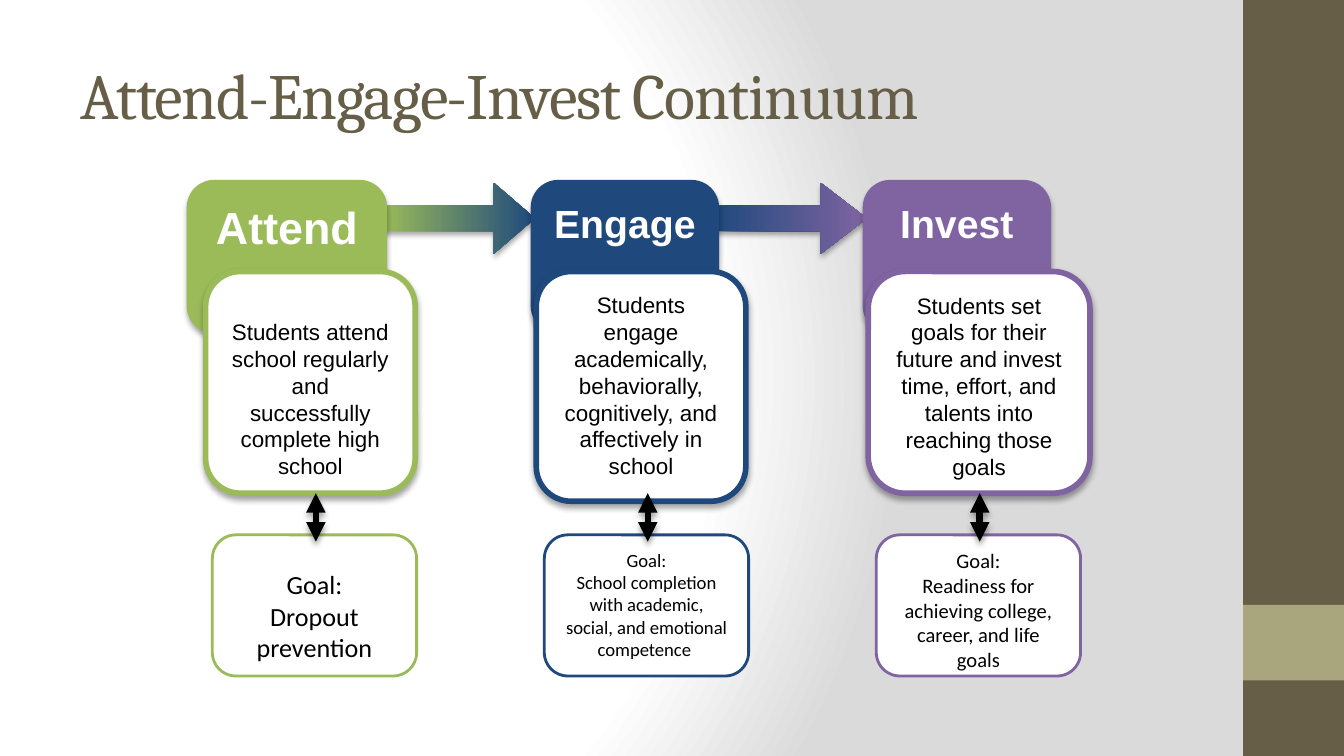
from lxml import etree
from pptx import Presentation
from pptx.dml.color import RGBColor
from pptx.enum.shapes import MSO_CONNECTOR, MSO_SHAPE
from pptx.enum.text import MSO_ANCHOR, PP_ALIGN
from pptx.oxml import parse_xml
from pptx.oxml.ns import nsdecls, qn
from pptx.util import Inches, Pt

ROUNDED, RECTANGLE, ARROW = (
    MSO_SHAPE.ROUNDED_RECTANGLE, MSO_SHAPE.RECTANGLE, MSO_SHAPE.RIGHT_ARROW)
STRAIGHT = MSO_CONNECTOR.STRAIGHT
TOP, MIDDLE = MSO_ANCHOR.TOP, MSO_ANCHOR.MIDDLE
LEFT, CENTER = PP_ALIGN.LEFT, PP_ALIGN.CENTER

# Content: spans are (left offset in the column, width), in inches
TITLE = "Attend-Engage-Invest Continuum"
STAGES = [
    {"name": "Attend", "color": "green", "name_size": 24,
     "header": (-0.17, 1.45), "detail": (-0.05, 1.56), "detail_height": 1.65,
     "text": "Students attend school regularly and successfully complete high school",
     "text_drop": 0.2, "goal": "Dropout prevention", "goal_size": 14, "goal_drop": 0.15},
    {"name": "Engage", "color": "blue", "name_size": 21,
     "header": (-0.08, 1.36), "detail": (-0.06, 1.56), "detail_height": 1.71,
     "text": "Students engage academically, behaviorally, cognitively, and affectively in school",
     "text_drop": 0, "goal": "School completion with academic, social, and emotional competence ",
     "goal_size": 10, "goal_drop": 0},
    {"name": "Invest", "color": "purple", "name_size": 21,
     "header": (-0.08, 1.36), "detail": (-0.06, 1.65), "detail_height": 1.65,
     "text": "Students set goals for their future and invest time, effort, and talents "
             "into reaching those goals",
     "text_drop": 0, "goal": "Readiness for achieving college, career, and life goals",
     "goal_size": 11, "goal_drop": 0},
]
COLORS = {"green": "9BBB59", "blue": "1F497D", "purple": "8064A2", "white": "FFFFFF",
          "black": "000000", "brown": "675E47", "khaki": "A9A57C", "gray": "DADADA"}

# Grid, on a 16:9 slide
WIDTH = 10
HEIGHT = WIDTH * 9 / 16
COLUMN_START, COLUMN_PITCH = 1.58, 2.47
HEADER_TOP, HEADER_HEIGHT = 1.36, 1.1
DETAIL_TOP = 2.02
GOAL_TOP, GOAL_WIDTH, GOAL_HEIGHT = 3.98, 1.52, 1.05
LINK_OFFSET, LINK_TOP, LINK_BOTTOM = 0.77, 3.67, 4.03
ARROWS = [(2.84, 0.58), (5.31, 0.65)]
ARROW_WIDTH, ARROW_HEIGHT, ARROW_SHAFT = 1.14, 0.53, 0.36


def rgb(name):
    return RGBColor.from_string(COLORS[name])


def add_shadow(element):
    properties = element.spPr
    effects = properties.find(qn("a:effectLst"))
    if effects is None:
        effects = etree.SubElement(properties, qn("a:effectLst"))
    effects.append(parse_xml(
        f'<a:outerShdw {nsdecls("a")} blurRad="{Pt(3)}" dist="{Pt(2.1)}" dir="5400000" '
        f'rotWithShape="0"><a:srgbClr val="{COLORS["black"]}"><a:alpha val="35000"/>'
        '</a:srgbClr></a:outerShdw>'))


def add_block(kind, box, fill, line=None, line_width=1, shadow=False):
    shape = slide.shapes.add_shape(kind, *map(Inches, box))
    shape.shadow.inherit = False
    if isinstance(fill, tuple):
        shape.fill.gradient()
        shape.fill.gradient_angle = 0
        for stop, color in zip(shape.fill.gradient_stops, fill):
            stop.color.rgb = rgb(color)
    else:
        shape.fill.solid()
        shape.fill.fore_color.rgb = rgb(fill)
    if line:
        shape.line.color.rgb = rgb(line)
        shape.line.width = Pt(line_width)
    else:
        shape.line.fill.background()
    if shadow:
        add_shadow(shape._element)
    return shape


def write(shape, lines, font, size, color, bold=False, inset=0.05, drop=0,
          anchor=TOP, align=CENTER):
    frame = shape.text_frame
    frame_format = {"word_wrap": True, "vertical_anchor": anchor,
                    "margin_top": Inches(inset + drop), "margin_bottom": Inches(inset)}
    for name, value in frame_format.items():
        setattr(frame, name, value)
    frame.text = "\n".join(lines)
    for paragraph in frame.paragraphs:
        paragraph.alignment = align
        run = paragraph.runs[0]
        for name, value in {"name": font, "size": Pt(size), "bold": bold}.items():
            setattr(run.font, name, value)
        run.font.color.rgb = rgb(color)


presentation = Presentation()
presentation.slide_width, presentation.slide_height = Inches(WIDTH), Inches(HEIGHT)
slide = presentation.slides.add_slide(presentation.slide_layouts[6])

# Background glow
slide.background.fill.solid()
solid = next(slide._element.iter(qn("a:solidFill")))
stops = "".join(f'<a:gs pos="{position * 1000}"><a:srgbClr val="{COLORS[color]}"/></a:gs>'
                for position, color in [(0, "white"), (75, "white"), (100, "gray")])
solid.getparent().replace(solid, parse_xml(
    f'<a:gradFill {nsdecls("a")} rotWithShape="1"><a:gsLst>{stops}</a:gsLst>'
    '<a:path path="circle"><a:fillToRect l="20000" t="50000" r="100000" b="50000"/>'
    '</a:path></a:gradFill>'))

# Side band
band_left, band_width = 0.925 * WIDTH, 0.075 * WIDTH
add_block(RECTANGLE, (band_left, 0, band_width, HEIGHT), "brown")
add_block(RECTANGLE, (band_left, 0.8 * HEIGHT, band_width, 0.1 * HEIGHT), "khaki")

# Title
title = slide.shapes.add_textbox(*map(Inches, (0.5, 0.23, 8.33, 0.94)))
write(title, [TITLE], "Cambria", 34.5, "brown", anchor=MIDDLE, align=LEFT)
title.text_frame.paragraphs[0].runs[0]._r.get_or_add_rPr().set("spc", "-75")

# Arrows between stages
for (left, head), start, end in zip(ARROWS, STAGES, STAGES[1:]):
    arrow = add_block(ARROW, (left, HEADER_TOP, ARROW_WIDTH, ARROW_HEIGHT),
                      (start["color"], end["color"]), shadow=True)
    arrow.adjustments[0], arrow.adjustments[1] = ARROW_SHAFT, head

# Stage columns: header, detail card, goal, two-way link
for index, stage in enumerate(STAGES):
    column = COLUMN_START + index * COLUMN_PITCH
    color = stage["color"]

    offset, width = stage["header"]
    header = add_block(ROUNDED, (column + offset, HEADER_TOP, width, HEADER_HEIGHT),
                       color, color, 3, shadow=True)
    write(header, [stage["name"]], "Arial", stage["name_size"], "white", True, 0.07)

    offset, width = stage["detail"]
    detail = add_block(ROUNDED, (column + offset, DETAIL_TOP, width, stage["detail_height"]),
                       "white", color, 3, shadow=True)
    write(detail, [stage["text"]], "Arial", 12, "black", inset=0.07, drop=stage["text_drop"])

    goal = add_block(ROUNDED, (column, GOAL_TOP, GOAL_WIDTH, GOAL_HEIGHT), "white", color, 1.5)
    write(goal, ["Goal:", stage["goal"]], "Calibri", stage["goal_size"], "black",
          drop=stage["goal_drop"])

    center = column + LINK_OFFSET
    link = slide.shapes.add_connector(
        STRAIGHT, *map(Inches, (center, LINK_TOP, center, LINK_BOTTOM)))
    link.line.color.rgb = rgb("black")
    link.line.width = Pt(3.5)
    for end in ("a:headEnd", "a:tailEnd"):
        etree.SubElement(link.line._get_or_add_ln(), qn(end), type="triangle")
    add_shadow(link._element)

presentation.save("out.pptx")
